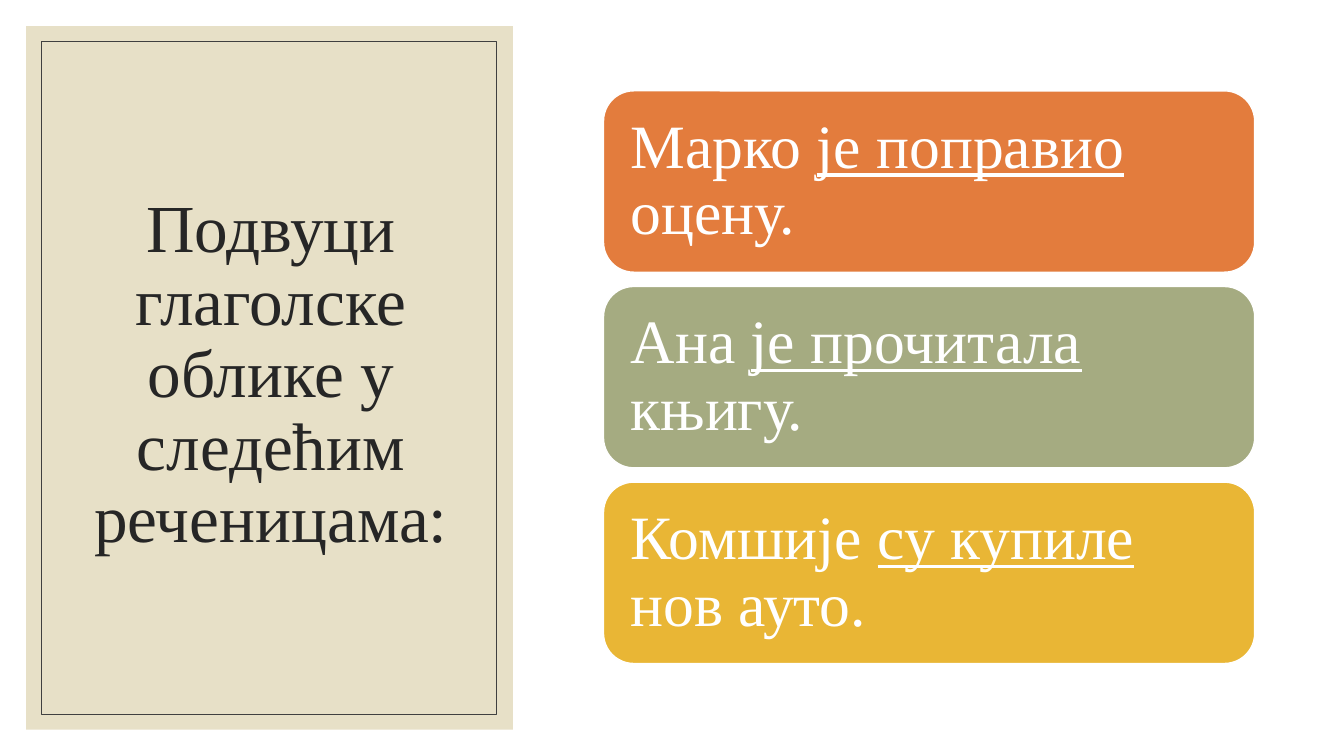
import pptx
import pptx.dml.color
import pptx.enum.shapes
import pptx.enum.text
import pptx.util

Cm = pptx.util.Cm
Pt = pptx.util.Pt
RGBColor = pptx.dml.color.RGBColor
MSO_SHAPE = pptx.enum.shapes.MSO_SHAPE
PP_ALIGN = pptx.enum.text.PP_ALIGN

WHITE = RGBColor(0xFF, 0xFF, 0xFF)
SAND = RGBColor(0xE7, 0xE0, 0xC7)
INK = RGBColor(0x26, 0x26, 0x26)
FRAME_GREY = RGBColor(0x40, 0x40, 0x40)
ORANGE = RGBColor(0xE3, 0x7C, 0x3D)
SAGE = RGBColor(0xA5, 0xAB, 0x81)
GOLD = RGBColor(0xE9, 0xB6, 0x35)
FONT = "Times New Roman"

# Content: each sentence is split around its underlined verb form
TASK = "Подвуци глаголске облике у следећим реченицама:"
SENTENCES = [
    (ORANGE, "Марко ", "је поправио ", "оцену."),
    (SAGE, "Ана ", "је прочитала ", "књигу."),
    (GOLD, "Комшије ", "су купиле ", "нов ауто."),
]

# Layout in centimetres
PANEL = (0.66, 0.66, 12.27, 17.73)
FRAME = (1.04, 1.04, 11.46, 16.97)
TASK_BOX = (1.6, 1.55, 10.46, 15.85)
CARD_LEFT, CARD_TOP, CARD_WIDTH, CARD_HEIGHT = 15.21, 2.29, 16.41, 4.57
CARD_GAP = 0.36
CARD_INSET = Cm(0.46)


def add_block(slide, kind, box, fill=None, line=None, line_width=1):
    block = slide.shapes.add_shape(kind, *map(Cm, box))
    block.shadow.inherit = False
    if fill is None:
        block.fill.background()
    else:
        block.fill.solid()
        block.fill.fore_color.rgb = fill
    if line is None:
        block.line.fill.background()
    else:
        block.line.color.rgb = line
        block.line.width = Pt(line_width)
    return block


def format_run(run, size, color):
    run.font.name = FONT
    run.font.size = Pt(size)
    run.font.color.rgb = color


def prepare_frame(frame):
    frame.word_wrap = True
    frame.auto_size = pptx.enum.text.MSO_AUTO_SIZE.NONE
    frame.vertical_anchor = pptx.enum.text.MSO_ANCHOR.MIDDLE


def add_card(slide, index, color, before, verb, after):
    top = CARD_TOP + index * (CARD_HEIGHT + CARD_GAP)
    card = add_block(slide, MSO_SHAPE.ROUNDED_RECTANGLE,
                     (CARD_LEFT, top, CARD_WIDTH, CARD_HEIGHT), color, WHITE)
    frame = card.text_frame
    prepare_frame(frame)
    frame.margin_left = frame.margin_right = CARD_INSET
    frame.margin_top = frame.margin_bottom = CARD_INSET
    sentence = frame.paragraphs[0]
    sentence.alignment = PP_ALIGN.LEFT
    sentence.line_spacing = 0.9
    for part in (before, verb, after):
        run = sentence.add_run()
        run.text = part
        format_run(run, 44, WHITE)
        run.font.underline = part == verb


def main():
    deck = pptx.Presentation()
    deck.slide_width, deck.slide_height = Cm(33.87), Cm(19.05)
    slide = deck.slides.add_slide(deck.slide_layouts[5])

    # Panel with the task
    add_block(slide, MSO_SHAPE.RECTANGLE, PANEL, SAND)
    task = slide.shapes.title
    slide.shapes._spTree.append(task._element)  # bring in front of the panel
    task.left, task.top, task.width, task.height = map(Cm, TASK_BOX)
    task.text_frame.text = TASK
    prepare_frame(task.text_frame)
    task_line = task.text_frame.paragraphs[0]
    task_line.alignment = PP_ALIGN.CENTER
    task_line.line_spacing = 0.9
    format_run(task_line.runs[0], 48, INK)
    add_block(slide, MSO_SHAPE.RECTANGLE, FRAME, line=FRAME_GREY, line_width=0.5)

    # Sentence cards
    for index, sentence in enumerate(SENTENCES):
        add_card(slide, index, *sentence)

    deck.save("out.pptx")


if __name__ == "__main__":
    main()
